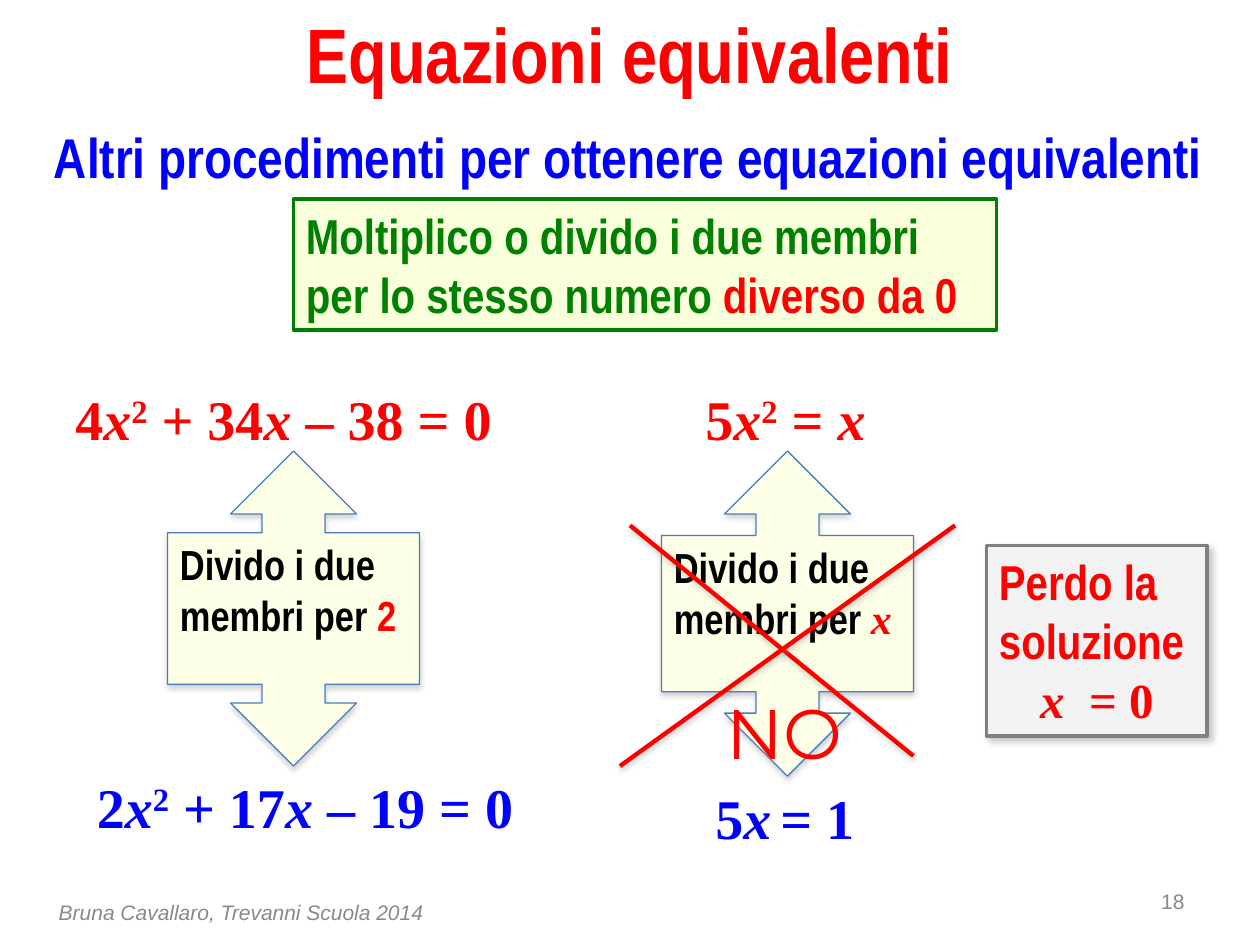
import pptx
import pptx.util
import pptx.dml.color
import pptx.enum.shapes
import pptx.enum.text
import pptx.oxml
import pptx.oxml.ns
from lxml import etree

Inches, Pt = pptx.util.Inches, pptx.util.Pt
Shape = pptx.enum.shapes.MSO_SHAPE
Align = pptx.enum.text.PP_ALIGN
Anchor = pptx.enum.text.MSO_ANCHOR

COLORS = {
    "red": "FF0000", "blue": "0000FF", "green": "008000", "black": "000000",
    "muted": "898989", "cream": "FDFFE7", "lime": "F9FFDB", "steel": "4A7EBB",
    "pale": "F2F2F2", "gray": "7F7F7F", "shadow": "808080",
}
NARROW, SERIF = "Arial Narrow", "Times New Roman"
X = ("x", {"italic": True})
X_SPACE = ("x ", {"italic": True})
THIN_SPACE = (" ", {"size": 20})
SQUARED = ("2", {"raised": True})

# Content: a paragraph is a list of (text, changes to the box's format)
FOOTERS = [
    ((7.17, 6.95, 2.33, 0.4), "18", {"align": Align.RIGHT}),
    ((0, 6.98, 3.83, 0.52), "Bruna Cavallaro, Trevanni Scuola 2014",
     {"align": Align.CENTER, "italic": True}),
]
HEADINGS = [
    ((0.5, 0, 9, 0.92), "Equazioni equivalenti",
     {"size": 44, "color": "red", "align": Align.CENTER}),
    ((0.33, 0.92, 9.33, 0.64),
     "Altri procedimenti per ottenere equazioni equivalenti",
     {"size": 32, "color": "blue"}),
]
EQUATIONS = [
    ((5.5, 3, 1.51, 0.64), "red", [("5", {}), X, SQUARED, (" = ", {}), X]),
    ((5.58, 6.17, 1.32, 0.64), "blue", [("5", {}), X, THIN_SPACE, ("= 1", {})]),
    ((0.5, 3, 3.56, 0.64), "red",
     [("4", {}), X, SQUARED, (" + 34", {}), X_SPACE, ("– 38 = 0", {})]),
    ((0.67, 6.08, 3.56, 0.64), "blue",
     [("2", {}), X, SQUARED, (" + 17", {}), X_SPACE, ("– 19 = 0", {})]),
]
CALLOUTS = [
    ((5.25, 3.58, 2, 2.58), ("x", {"font": SERIF, "color": "red", "italic": True})),
    ((1.33, 3.58, 2, 2.5), ("2", {"color": "red"})),
]
RULE = [("Moltiplico o divido i due membri per lo stesso numero ", {}),
        ("diverso da 0", {"color": "red"})]
LOST_ROOT = [("x ", {"font": SERIF, "italic": True}), (" = 0", {"font": SERIF})]
CROSS = [((5, 4.17), (7.25, 6)), ((7.58, 4.17), (4.92, 6.08))]


def rgb(name):
    return pptx.dml.color.RGBColor.from_string(COLORS[name])


def write(box, paragraphs, align=Align.LEFT, anchor=Anchor.TOP, wrap=True, **style):
    """Fill a box; a paragraph is a string or a list of (text, changes)."""
    frame = box.text_frame
    frame.word_wrap = wrap
    frame.vertical_anchor = anchor
    if not wrap:
        frame.auto_size = pptx.enum.text.MSO_AUTO_SIZE.SHAPE_TO_FIT_TEXT
    aligns = align if isinstance(align, list) else [align] * len(paragraphs)
    for index, content in enumerate(paragraphs):
        para = frame.add_paragraph() if index else frame.paragraphs[0]
        para.alignment = aligns[index]
        spans = [(content, {})] if isinstance(content, str) else content
        for text, changes in spans:
            look = {**style, **changes}
            span = para.add_run()
            span.text = text
            span.font.name = look["font"]
            span.font.size = Pt(look["size"])
            span.font.bold = look.get("bold", False)
            span.font.italic = look.get("italic", False)
            span.font.color.rgb = rgb(look["color"])
            if look.get("raised"):
                span.font._element.set("baseline", "30000")


def add_text(page, place, paragraphs, **style):
    box = page.shapes.add_textbox(*map(Inches, place))
    write(box, paragraphs, **style)


def add_shadow(shape, alpha, blur, distance, angle):
    properties = shape._element.spPr
    effects = properties.find(pptx.oxml.ns.qn("a:effectLst"))
    if effects is None:
        effects = etree.SubElement(properties, pptx.oxml.ns.qn("a:effectLst"))
    effects.append(pptx.oxml.parse_xml(
        f'<a:outerShdw {pptx.oxml.ns.nsdecls("a")} blurRad="{Pt(blur)}" '
        f'dist="{Pt(distance)}" dir="{angle * 60000}" rotWithShape="0">'
        f'<a:srgbClr val="{COLORS["shadow"]}"><a:alpha val="{alpha * 1000}"/>'
        '</a:srgbClr></a:outerShdw>'))


def add_panel(page, kind, place, paragraphs, fill, line, width, shadow=None, **style):
    panel = page.shapes.add_shape(kind, *map(Inches, place))
    panel.shadow.inherit = False
    panel.fill.solid()
    panel.fill.fore_color.rgb = rgb(fill)
    panel.line.color.rgb = rgb(line)
    panel.line.width = Pt(width)
    if shadow:
        add_shadow(panel, *shadow)
    write(panel, paragraphs, font=NARROW, bold=True, **style)
    return panel


def add_stroke(page, start, end):
    stroke = page.shapes.add_connector(
        pptx.enum.shapes.MSO_CONNECTOR.STRAIGHT, *map(Inches, start + end))
    stroke.line.color.rgb = rgb("red")
    stroke.line.width = Pt(2.5)
    add_shadow(stroke, 38, 3.1, 1.6, 90)


def main():
    deck = pptx.Presentation()
    deck.slide_width, deck.slide_height = Inches(10), Inches(7.5)
    page = deck.slides.add_slide(deck.slide_layouts[6])

    # Footer and headings
    for place, text, style in FOOTERS:
        add_text(page, place, [text], font="Arial", size=12, color="muted",
                 anchor=Anchor.MIDDLE, **style)
    for place, text, style in HEADINGS:
        add_text(page, place, [text], font=NARROW, bold=True, **style)

    # Rule, and the step that leads from each equation to the next
    add_panel(page, Shape.RECTANGLE, (2.33, 1.58, 5.58, 1.04), [RULE],
              "lime", "green", 2, size=28, color="green")
    for place, divisor in CALLOUTS:
        callout = add_panel(
            page, Shape.UP_DOWN_ARROW_CALLOUT, place,
            [[("Divido i due membri per ", {}), divisor]],
            "cream", "steel", 0.75, shadow=(35, 3.1, 1.8, 90),
            size=24, color="black")
        for index, value in enumerate((0.25, 0.25, 0.25, 0.481)):
            callout.adjustments[index] = value
    for place, color, spans in EQUATIONS:
        add_text(page, place, [spans], font=SERIF, size=32, bold=True,
                 color=color, wrap=False)

    # Crossed-out step and its consequence
    for start, end in CROSS:
        add_stroke(page, start, end)
    add_text(page, (5.67, 5.42, 1.14, 0.77), ["NO"], font="Montserrat",
             size=40, color="red", wrap=False)
    add_panel(page, Shape.RECTANGLE, (7.83, 4.33, 1.75, 1.51),
              ["Perdo la soluzione", LOST_ROOT], "pale", "gray", 2,
              shadow=(43, 4, 3, 47), size=28, color="red",
              align=[Align.LEFT, Align.CENTER])

    deck.save("out.pptx")


if __name__ == "__main__":
    main()
